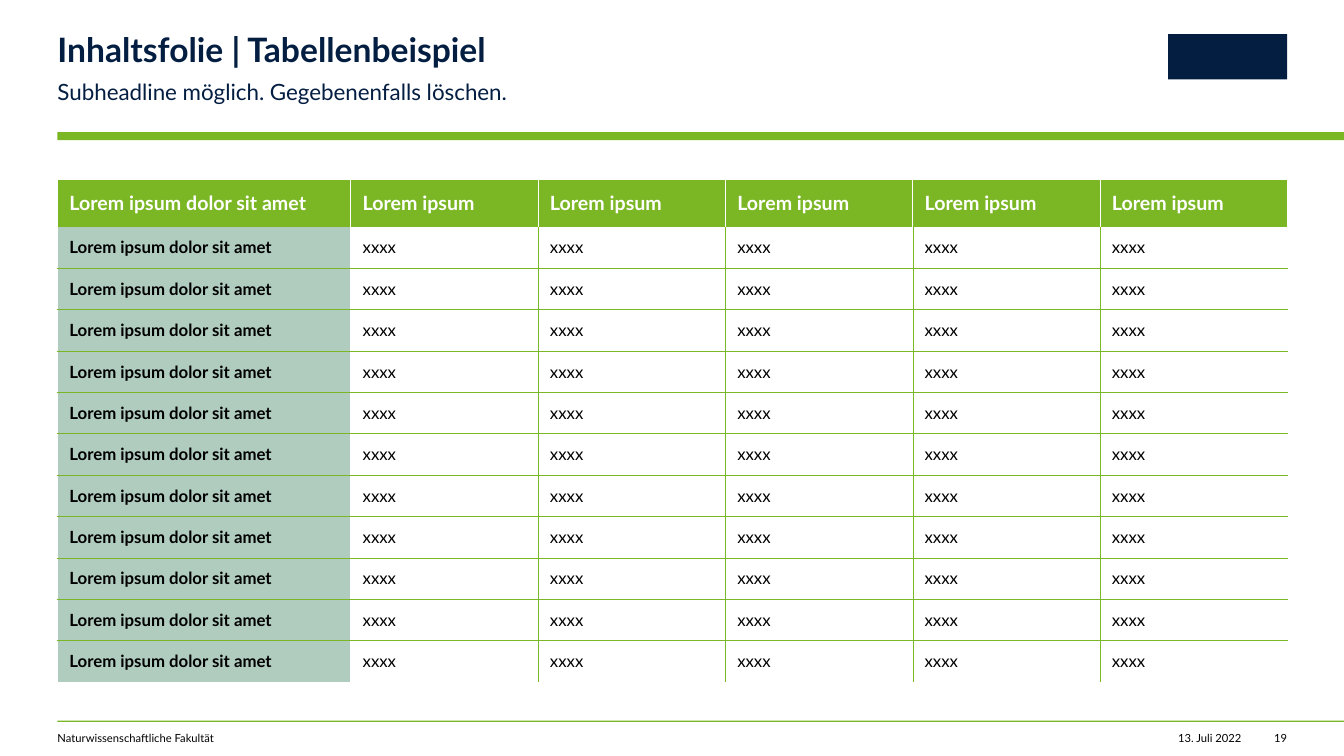
from dataclasses import dataclass

from lxml.etree import SubElement
from pptx import Presentation
from pptx.dml.color import RGBColor
from pptx.enum.shapes import MSO_SHAPE
from pptx.enum.text import MSO_ANCHOR, MSO_AUTO_SIZE, PP_ALIGN
from pptx.oxml.ns import qn
from pptx.slide import Slide
from pptx.table import _Cell
from pptx.text.text import _Paragraph
from pptx.util import Cm, Pt


@dataclass(frozen=True)
class Theme:
    font: str = "Lato"
    green: str = "7BB725"
    sage: str = "B0CCBF"
    navy: str = "041E42"
    white: str = "FFFFFF"
    black: str = "000000"
    title_size: int = 24
    subtitle_size: int = 16
    header_size: int = 14
    body_size: int = 12
    footer_size: int = 8


@dataclass(frozen=True)
class Box:
    left: float
    top: float
    width: float
    height: float


@dataclass(frozen=True)
class Bar:
    box: Box
    color: str


@dataclass(frozen=True)
class Label:
    text: str
    box: Box
    size: int
    color: str
    bold: bool = False
    align: PP_ALIGN = PP_ALIGN.LEFT
    wrap: bool = True
    line_spacing: float = 1.0
    right_inset: float = 0


@dataclass(frozen=True)
class Border:
    color: str
    width: float


THEME = Theme()
SLIDE_WIDTH = 33.87
SLIDE_HEIGHT = 19.05
MARGIN = 1.45
RULE_WIDTH = SLIDE_WIDTH - MARGIN

BARS = [
    Bar(Box(MARGIN, 3.33, RULE_WIDTH, 0.2), THEME.green),
    Bar(Box(MARGIN, 18.16, RULE_WIDTH, 0.03), THEME.green),
    Bar(Box(29.44, 0.86, 3, 1.14), THEME.navy),
]
LABELS = [
    Label("13. Juli 2022", Box(29.41, 18.44, 1.88, 0.33), THEME.footer_size, THEME.black,
          align=PP_ALIGN.RIGHT, wrap=False),
    Label("Naturwissenschaftliche Fakultät", Box(MARGIN, 18.44, 15.19, 0.33),
          THEME.footer_size, THEME.black),
    Label("19", Box(32.08, 18.44, 0.36, 0.33), THEME.footer_size, THEME.black,
          align=PP_ALIGN.RIGHT, wrap=False),
    Label("Inhaltsfolie | Tabellenbeispiel", Box(MARGIN, 0.84, 19.02, 0.91),
          THEME.title_size, THEME.navy, bold=True, line_spacing=0.9),
    Label("Subheadline möglich. Gegebenenfalls löschen.", Box(MARGIN, 1.9, 19.02, 0.69),
          THEME.subtitle_size, THEME.navy, line_spacing=1.1, right_inset=1),
]

TABLE_BOX = Box(MARGIN, 4.52, 30.99, 12.67)
VALUE_COLUMNS = 5
BODY_ROWS = 11
FIRST_COLUMN_WIDTH = 7.39
HEADER_HEIGHT = 1.19
ROWS = [["Lorem ipsum dolor sit amet"] + ["Lorem ipsum"] * VALUE_COLUMNS]
ROWS += [["Lorem ipsum dolor sit amet"] + ["xxxx"] * VALUE_COLUMNS for _ in range(BODY_ROWS)]

FRAME = Border(THEME.white, 1)
HEADER_DIVIDER = Border(THEME.white, 0.5)
GRID = Border(THEME.green, 0.25)


def add_run(paragraph: _Paragraph, text: str, size: int, color: str, bold: bool) -> None:
    run = paragraph.add_run()
    run.text = text
    run.font.name = THEME.font
    run.font.size = Pt(size)
    run.font.bold = bold
    run.font.color.rgb = RGBColor.from_string(color)


def add_bar(slide: Slide, bar: Bar) -> None:
    box = bar.box
    shape = slide.shapes.add_shape(
        MSO_SHAPE.RECTANGLE, Cm(box.left), Cm(box.top), Cm(box.width), Cm(box.height))
    shape.shadow.inherit = False
    shape.fill.solid()
    shape.fill.fore_color.rgb = RGBColor.from_string(bar.color)
    shape.line.fill.background()


def add_label(slide: Slide, label: Label) -> None:
    box = label.box
    shape = slide.shapes.add_textbox(Cm(box.left), Cm(box.top), Cm(box.width), Cm(box.height))
    frame = shape.text_frame
    frame.margin_left = frame.margin_top = frame.margin_bottom = 0
    frame.margin_right = Cm(label.right_inset)
    frame.word_wrap = label.wrap
    frame.auto_size = MSO_AUTO_SIZE.SHAPE_TO_FIT_TEXT
    paragraph = frame.paragraphs[0]
    paragraph.alignment = label.align
    paragraph.line_spacing = label.line_spacing
    add_run(paragraph, label.text, label.size, label.color, label.bold)


def vertical_border(row: int, boundary: int) -> Border:
    if boundary in (0, VALUE_COLUMNS + 1):
        return FRAME
    if row == 0:
        return HEADER_DIVIDER
    return FRAME if boundary == 1 else GRID


def horizontal_border(boundary: int) -> Border | None:
    if boundary == 0:
        return FRAME
    return None if boundary in (1, BODY_ROWS + 1) else GRID


def set_border(cell: _Cell, side: str, border: Border | None) -> None:
    properties = cell._tc.get_or_add_tcPr()
    line = SubElement(properties, qn(f"a:ln{side}"))
    if border is None:
        SubElement(line, qn("a:noFill"))
        return
    line.set("w", str(Pt(border.width)))
    fill = SubElement(line, qn("a:solidFill"))
    SubElement(fill, qn("a:srgbClr")).set("val", border.color)


def fill_cell(cell: _Cell, row: int, column: int, text: str) -> None:
    is_header = row == 0
    set_border(cell, "L", vertical_border(row, column))
    set_border(cell, "R", vertical_border(row, column + 1))
    set_border(cell, "T", horizontal_border(row))
    set_border(cell, "B", horizontal_border(row + 1))
    if is_header or column == 0:
        cell.fill.solid()
        cell.fill.fore_color.rgb = RGBColor.from_string(THEME.green if is_header else THEME.sage)
    else:
        cell.fill.background()
    cell.vertical_anchor = MSO_ANCHOR.MIDDLE
    cell.margin_left = cell.margin_right = Cm(0.3)
    cell.margin_top = cell.margin_bottom = Cm(0.1)
    add_run(cell.text_frame.paragraphs[0], text,
            THEME.header_size if is_header else THEME.body_size,
            THEME.white if is_header else THEME.black, is_header or column == 0)


def add_example_table(slide: Slide) -> None:
    box = TABLE_BOX
    table = slide.shapes.add_table(
        BODY_ROWS + 1, VALUE_COLUMNS + 1,
        Cm(box.left), Cm(box.top), Cm(box.width), Cm(box.height)).table
    table.horz_banding = False
    value_width = (box.width - FIRST_COLUMN_WIDTH) / VALUE_COLUMNS
    body_height = (box.height - HEADER_HEIGHT) / BODY_ROWS
    for index, column in enumerate(table.columns):
        column.width = Cm(value_width if index else FIRST_COLUMN_WIDTH)
    for index, row in enumerate(table.rows):
        row.height = Cm(body_height if index else HEADER_HEIGHT)
    for row_index, texts in enumerate(ROWS):
        for column_index, text in enumerate(texts):
            fill_cell(table.cell(row_index, column_index), row_index, column_index, text)


def main() -> None:
    presentation = Presentation()
    presentation.slide_width = Cm(SLIDE_WIDTH)
    presentation.slide_height = Cm(SLIDE_HEIGHT)
    slide = presentation.slides.add_slide(presentation.slide_layouts[6])
    for bar in BARS:
        add_bar(slide, bar)
    add_example_table(slide)
    for label in LABELS:
        add_label(slide, label)
    presentation.save("out.pptx")


if __name__ == "__main__":
    main()
